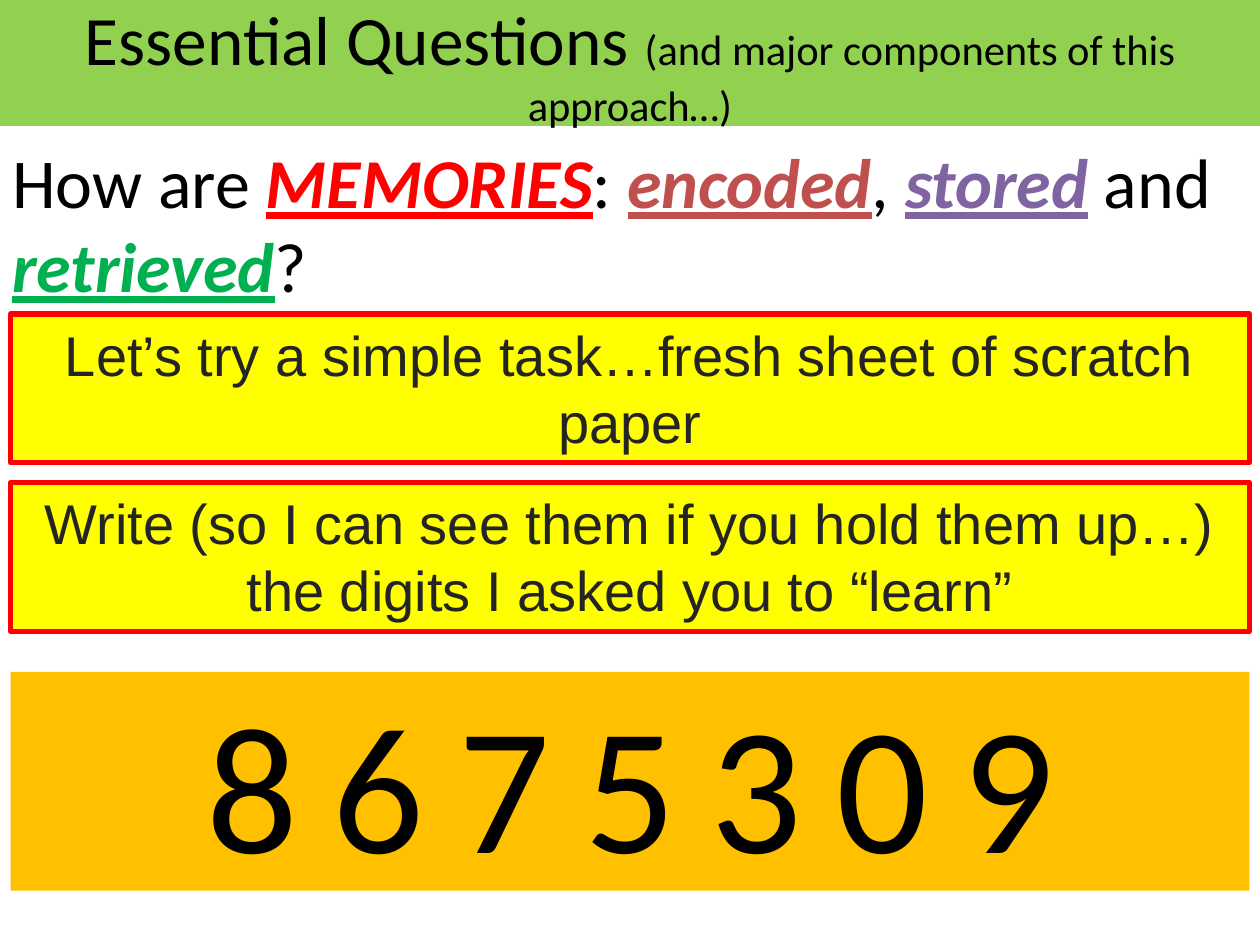
from pptx import Presentation
from pptx.dml.color import RGBColor
from pptx.enum.shapes import MSO_SHAPE as Shape
from pptx.enum.text import MSO_ANCHOR as Anchor, PP_ALIGN as Align
from pptx.util import Pt


def color(code):
    return RGBColor.from_string(code)


def write(box, runs, anchor, align):
    """Fill a box with one paragraph of (text, colour, format) runs."""
    frame = box.text_frame
    frame.word_wrap = True
    frame.vertical_anchor = anchor
    para = frame.paragraphs[0]
    para.alignment = align
    for text, ink, style in runs:
        run = para.add_run()
        run.text = text
        run.font.color.rgb = color(ink)
        for key, value in style.items():
            setattr(run.font, key, value)


deck = Presentation()
deck.slide_width, deck.slide_height = Pt(720), Pt(540)
slide = deck.slides.add_slide(deck.slide_layouts[6])

black, gray = "000000", "242424"
body = {"name": "Calibri", "size": Pt(40)}
key = body | {"bold": True, "italic": True, "underline": True}
task = {"name": "Arial", "size": Pt(32)}
left, width = 6, 708

# Question
box = slide.shapes.add_textbox(Pt(0), Pt(75.6), Pt(720), Pt(104.4))
write(box, [
    ("How are ", black, body),
    ("MEMORIES", "FF0000", key),
    (": ", black, body),
    ("encoded", "C0504D", key),
    (", ", black, body),
    ("stored", "8064A2", key),
    (" and ", black, body),
    ("retrieved", "00B050", key),
    ("?", black, body),
], Anchor.TOP, Align.LEFT)

# Title, tasks and digits: place, fill, line, anchor, runs
bands = [
    ((0, 0, 720, 72), "92D050", None, Anchor.MIDDLE, [
        ("Essential Questions ", black, body | {"size": Pt(39.6)}),
        ("(and major components of this approach…)", black,
         body | {"size": Pt(24.3)})]),
    ((left, 179.5, width, 85), "FFFF00", "FF0000", Anchor.TOP, [
        ("Let’s try a simple task…fresh sheet of scratch paper", gray, task)]),
    ((left, 275.75, width, 85), "FFFF00", "FF0000", Anchor.TOP, [
        ("Write (so I can see them if you hold them up…) "
         "the digits I asked you to “learn”", gray, task)]),
    ((left, 384, width, 125), "FFC000", None, Anchor.MIDDLE, [
        ("\t".join("8675309"), black, body | {"size": Pt(103.5)})]),
]
for place, fill, line, anchor, runs in bands:
    band = slide.shapes.add_shape(Shape.RECTANGLE, *map(Pt, place))
    band.shadow.inherit = False
    band.fill.solid()
    band.fill.fore_color.rgb = color(fill)
    if line:
        band.line.color.rgb = color(line)
        band.line.width = Pt(3)
    else:
        band.line.fill.background()
    write(band, runs, anchor, Align.CENTER)

deck.save("out.pptx")
